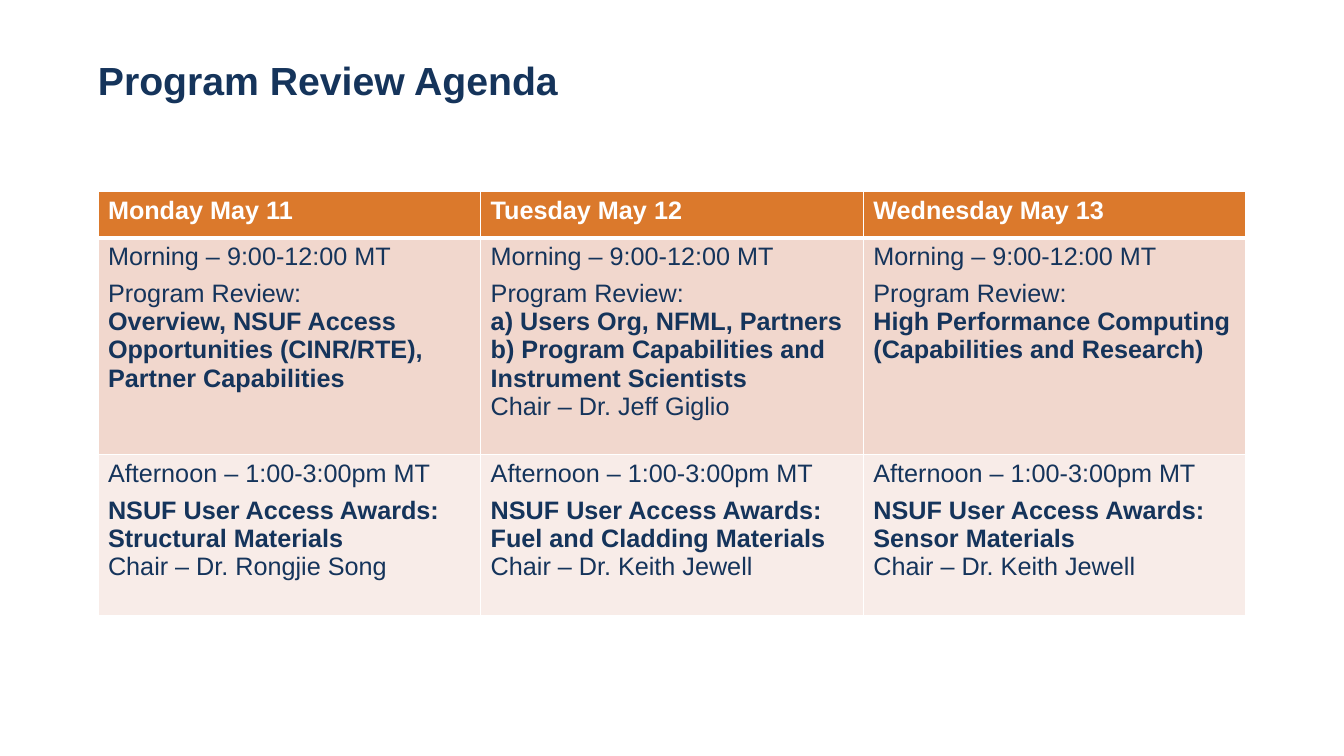
"""Build the program review agenda slide."""
from dataclasses import dataclass

from lxml import etree
from pptx import Presentation
from pptx.dml.color import RGBColor
from pptx.enum.text import MSO_ANCHOR
from pptx.oxml.ns import qn
from pptx.util import Pt

TOP = MSO_ANCHOR.TOP
NAVY = RGBColor(0x15, 0x34, 0x5B)
WHITE = RGBColor(0xFF, 0xFF, 0xFF)
ORANGE = RGBColor(0xDB, 0x79, 0x2C)
PEACH = RGBColor(0xF1, 0xD7, 0xCD)
PALE_PEACH = RGBColor(0xF8, 0xEC, 0xE8)
FONT = "Arial"
LEFT, WIDTH = 70, 820.1
THIN, THICK = 1, 3
MORNING = "Morning – 9:00-12:00 MT"
AFTERNOON = "Afternoon – 1:00-3:00pm MT"
REVIEW = "Program Review:"
AWARDS = "NSUF User Access Awards:"


@dataclass(frozen=True)
class Line:
    text: str
    bold: bool = False


@dataclass(frozen=True)
class Band:
    height: float
    fill: RGBColor
    color: RGBColor
    top_border: float
    bottom_border: float
    cells: list[list[Line]]


def morning(*topics: Line) -> list[Line]:
    return [Line(MORNING), Line(REVIEW), *topics]


def afternoon(topic: str, chair: str) -> list[Line]:
    return [Line(AFTERNOON), Line(AWARDS, True), Line(topic, True), Line(f"Chair – {chair}")]


BANDS = [
    Band(33.1, ORANGE, WHITE, THIN, THICK, [
        [Line("Monday May 11", True)],
        [Line("Tuesday May 12", True)],
        [Line("Wednesday May 13", True)],
    ]),
    Band(154.8, PEACH, NAVY, THICK, THIN, [
        morning(Line("Overview, NSUF Access Opportunities (CINR/RTE), Partner Capabilities", True)),
        morning(
            Line("a) Users Org, NFML, Partners", True),
            Line("b) Program Capabilities and Instrument Scientists", True),
            Line("Chair – Dr. Jeff Giglio"),
        ),
        morning(Line("High Performance Computing (Capabilities and Research)", True)),
    ]),
    Band(115.2, PALE_PEACH, NAVY, THIN, THIN, [
        afternoon("Structural Materials", "Dr. Rongjie Song"),
        afternoon("Fuel and Cladding Materials", "Dr. Keith Jewell"),
        afternoon("Sensor Materials", "Dr. Keith Jewell"),
    ]),
]


def style_paragraph(para, size: float, color: RGBColor, bold: bool) -> None:
    for span in para.runs:
        span.font.name = FONT
        span.font.size = Pt(size)
        span.font.bold = bold
        span.font.color.rgb = color


def add_borders(cell, top: float, bottom: float) -> None:
    properties = cell._tc.get_or_add_tcPr()
    edges = {"a:lnL": THIN, "a:lnR": THIN, "a:lnT": top, "a:lnB": bottom}
    for position, (tag, width) in enumerate(edges.items()):
        border = etree.Element(qn(tag), w=str(Pt(width)))
        fill = etree.SubElement(border, qn("a:solidFill"))
        etree.SubElement(fill, qn("a:srgbClr"), val=str(WHITE))
        properties.insert(position, border)


def fill_cell(cell, lines: list[Line], band: Band) -> None:
    cell.fill.solid()
    cell.fill.fore_color.rgb = band.fill
    add_borders(cell, band.top_border, band.bottom_border)
    cell.text_frame.text = "\n".join(line.text for line in lines)
    for para, line in zip(cell.text_frame.paragraphs, lines):
        style_paragraph(para, 18, band.color, line.bold)
    if len(lines) > 1:
        cell.text_frame.paragraphs[0].space_after = Pt(6)


def add_title(page) -> None:
    box = page.shapes.add_textbox(Pt(LEFT), Pt(44), Pt(WIDTH), Pt(79))
    frame = box.text_frame
    frame.word_wrap = True
    frame.vertical_anchor = TOP
    frame.margin_left = frame.margin_top = Pt(0)
    frame.text = "Program Review Agenda"
    frame.paragraphs[0].line_spacing = 0.9
    style_paragraph(frame.paragraphs[0], 28, NAVY, True)


def add_agenda(page) -> None:
    columns = len(BANDS[0].cells)
    height = sum(band.height for band in BANDS)
    agenda = page.shapes.add_table(
        len(BANDS), columns, Pt(LEFT), Pt(136.8), Pt(WIDTH), Pt(height)
    ).table
    agenda.horz_banding = False
    for column in agenda.columns:
        column.width = Pt(WIDTH / columns)
    for row, band in zip(agenda.rows, BANDS):
        row.height = Pt(band.height)
        for cell, lines in zip(row.cells, band.cells):
            fill_cell(cell, lines, band)


def main() -> None:
    deck = Presentation()
    deck.slide_width, deck.slide_height = Pt(960), Pt(540)
    page = deck.slides.add_slide(deck.slide_layouts[6])
    add_title(page)
    add_agenda(page)
    deck.save("out.pptx")


if __name__ == "__main__":
    main()
